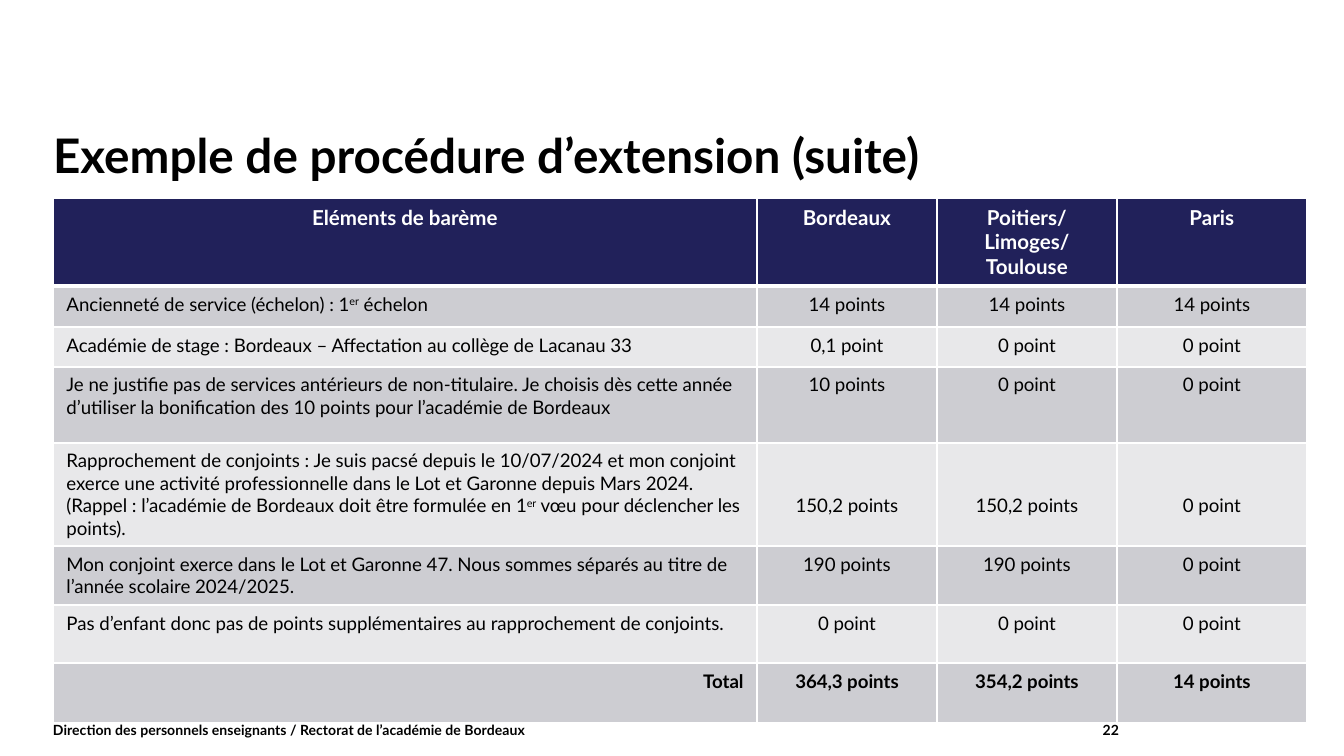
"""Build the slide on the points scale for an extension request."""
import pptx
import pptx.util
import pptx.dml.color
import pptx.enum.shapes
import pptx.enum.text
import pptx.oxml
import pptx.oxml.ns

RGB = pptx.dml.color.RGBColor
ALIGN = pptx.enum.text.PP_ALIGN
ANCHOR = pptx.enum.text.MSO_ANCHOR

SCALE = 914400 / 134.4
FONT = "Lato"
BLACK = RGB(0x00, 0x00, 0x00)
WHITE = RGB(0xFF, 0xFF, 0xFF)
NAVY = RGB(0x21, 0x21, 0x5A)
DARK = RGB(0xCD, 0xCD, 0xD2)
LIGHT = RGB(0xE8, 0xE8, 0xEA)

WIDTHS = [704, 180, 180, 190]
HEIGHTS = [88, 41, 40, 76, 102, 59, 58, 60]
DROP_ROW = 4
ROWS = [
    ["Eléments de barème", "Bordeaux", "Poitiers/Limoges/Toulouse", "Paris"],
    ["Ancienneté de service (échelon) : 1^er^ échelon",
     "14 points", "14 points", "14 points"],
    ["Académie de stage : Bordeaux – Affectation au collège de Lacanau 33",
     "0,1 point", "0 point", "0 point"],
    ["Je ne justifie pas de services antérieurs de non-titulaire. Je choisis "
     "dès cette année d’utiliser la bonification des 10 points pour "
     "l’académie de Bordeaux",
     "10 points", "0 point", "0 point"],
    ["Rapprochement de conjoints : Je suis pacsé depuis le 10/07/2024 et mon "
     "conjoint exerce une activité professionnelle dans le Lot et Garonne "
     "depuis Mars 2024.\n"
     "(Rappel : l’académie de Bordeaux doit être formulée en 1^er^ vœu pour "
     "déclencher les points).",
     "150,2 points", "150,2 points", "0 point"],
    ["Mon conjoint exerce dans le Lot et Garonne 47. Nous sommes séparés au "
     "titre de l’année scolaire 2024/2025.",
     "190 points", "190 points", "0 point"],
    ["Pas d’enfant donc pas de points supplémentaires au rapprochement de "
     "conjoints.",
     "0 point", "0 point", "0 point"],
    ["Total", "364,3 points", "354,2 points", "14 points"],
]


def px(num):
    """Turn px into EMU."""
    return pptx.util.Emu(round(num * SCALE))


def write(frame, text, size, color=BLACK, bold=False, align=ALIGN.LEFT):
    """Fill a frame; a newline parts paragraphs, carets hold superscripts."""
    for i, line in enumerate(text.split("\n")):
        para = frame.paragraphs[0] if i == 0 else frame.add_paragraph()
        para.alignment = align
        for j, part in enumerate(line.split("^")):
            run = para.add_run()
            run.text = part
            run.font.name = FONT
            run.font.size = pptx.util.Pt(size)
            run.font.bold = bold
            run.font.color.rgb = color
            if j % 2:
                run._r.get_or_add_rPr().set("baseline", "30000")


def add_rule(slide, left, right, top):
    """Add the thin level line above the footer."""
    rule = slide.shapes.add_connector(
        pptx.enum.shapes.MSO_CONNECTOR.STRAIGHT,
        px(left), px(top), px(right), px(top))
    rule.line.color.rgb = BLACK
    rule.line.width = pptx.util.Pt(0.8)
    space = pptx.oxml.ns.nsdecls("a")
    rule._element.spPr.append(pptx.oxml.parse_xml(f"<a:effectLst {space}/>"))


def add_text(slide, box, text, size, anchor, align=ALIGN.LEFT):
    """Add a bold text box without margins."""
    frame = slide.shapes.add_textbox(*map(px, box)).text_frame
    frame.word_wrap = True
    frame.vertical_anchor = anchor
    frame.margin_left = frame.margin_right = 0
    frame.margin_top = frame.margin_bottom = 0
    write(frame, text, size, bold=True, align=align)
    return frame


def add_edge(cell, side, width):
    """Draw one white cell border."""
    space = pptx.oxml.ns.nsdecls("a")
    edge = pptx.oxml.parse_xml(
        f'<a:ln{side} {space} w="{pptx.util.Pt(width)}"><a:solidFill>'
        f'<a:srgbClr val="{WHITE}"/></a:solidFill></a:ln{side}>')
    cell._tc.get_or_add_tcPr().append(edge)


def style_cell(cell, row, col, text):
    """Set the borders, fill and text of one cell."""
    head, total = row == 0, row == len(ROWS) - 1
    for side in "LRTB":
        thick = (row, side) in ((0, "B"), (1, "T"))
        add_edge(cell, side, 3 if thick else 1)
    cell.fill.solid()
    cell.fill.fore_color.rgb = NAVY if head else DARK if row % 2 else LIGHT
    align = ALIGN.CENTER
    if col == 0 and not head:
        align = ALIGN.RIGHT if total else ALIGN.LEFT
    if row == DROP_ROW and col:
        cell.margin_top = px(51)
    write(cell.text_frame, text, 11 if head else 10,
          WHITE if head else BLACK, head or total, align)


def add_grid(slide, left, top):
    """Add the table of points."""
    grid = slide.shapes.add_table(
        len(ROWS), len(WIDTHS), px(left), px(top),
        px(sum(WIDTHS)), px(sum(HEIGHTS))).table
    grid.first_row = grid.horz_banding = False
    for col, width in zip(grid.columns, WIDTHS):
        col.width = px(width)
    for row, height in zip(grid.rows, HEIGHTS):
        row.height = px(height)
    for i, texts in enumerate(ROWS):
        for j, text in enumerate(texts):
            style_cell(grid.cell(i, j), i, j, text)


def main():
    """Build and save the slide."""
    deck = pptx.Presentation()
    deck.slide_width, deck.slide_height = px(1344), px(756)
    slide = deck.slides.add_slide(deck.slide_layouts[6])
    add_rule(slide, 53, 1291, 703)
    title = add_text(slide, (53, 132, 1238, 106),
                     "Exemple de procédure d’extension (suite)",
                     25.5, ANCHOR.TOP)
    title.paragraphs[0].line_spacing = 0.9
    add_text(slide, (53, 703, 868, 53),
             "Direction des personnels enseignants / "
             "Rectorat de l’académie de Bordeaux", 7.5, ANCHOR.MIDDLE)
    add_text(slide, (921, 703, 198, 53), "22", 7.5, ANCHOR.MIDDLE,
             ALIGN.RIGHT)
    add_grid(slide, 53, 198)
    deck.save("out.pptx")


if __name__ == "__main__":
    main()
